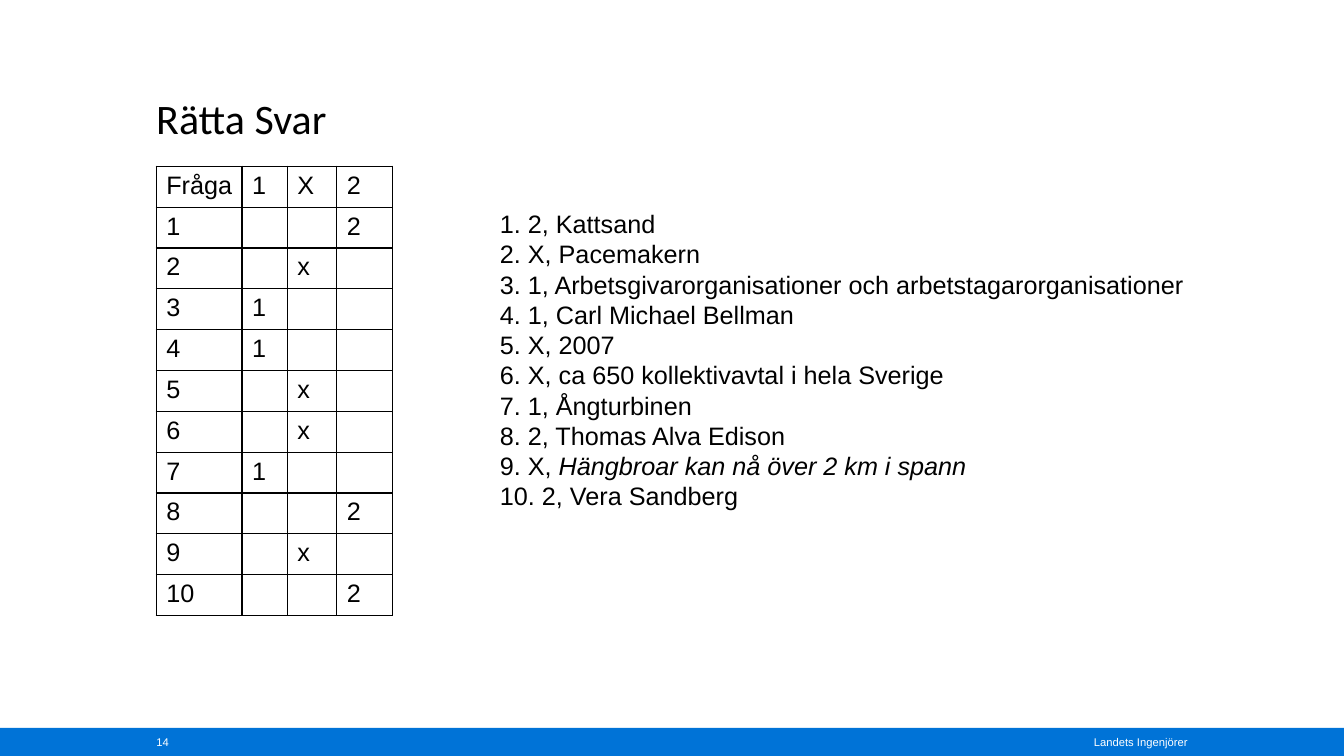
from dataclasses import dataclass

from lxml import etree
from pptx import Presentation
from pptx import util as u
from pptx.dml.color import RGBColor
from pptx.enum import shapes, text
from pptx.oxml import ns


@dataclass(frozen=True)
class Theme:
    ink: str = "000000"
    paper: str = "FFFFFF"
    bar: str = "0073D7"
    body_font: str = "Arial"
    title_font: str = "Calibri"
    title_size: int = 30
    body_size: int = 18
    footer_size: int = 8
    border: int = 1


ANSWERS = [
    ("2", "Kattsand"),
    ("X", "Pacemakern"),
    ("1", "Arbetsgivarorganisationer och arbetstagarorganisationer"),
    ("1", "Carl Michael Bellman"),
    ("X", "2007"),
    ("X", "ca 650 kollektivavtal i hela Sverige"),
    ("1", "Ångturbinen"),
    ("2", "Thomas Alva Edison"),
    ("X", "Hängbroar kan nå över 2 km i spann"),
    ("2", "Vera Sandberg"),
]
ITALIC_ANSWERS = {9}
CHOICES = ["1", "X", "2"]
COLUMN_WIDTHS = [0.85, 0.45, 0.49, 0.55]
ROW_HEIGHT = 4.46 / 11
CELL_RIGHT_MARGIN = 0.04


def add_run(p, content, *, font, size, color, italic=False):
    r = p.add_run()
    r.text = content
    r.font.name = font
    r.font.size = u.Pt(size)
    r.font.color.rgb = RGBColor.from_string(color)
    r.font.italic = italic
    return r


class Deck:
    def __init__(self, theme):
        self.theme = theme
        self.prs = Presentation()
        self.prs.slide_width = u.Inches(13.33)
        self.prs.slide_height = u.Inches(7.5)
        self.s = self.prs.slides.add_slide(self.prs.slide_layouts[6])
        self.body = dict(font=theme.body_font, size=theme.body_size, color=theme.ink)
        self.footer = dict(font=theme.body_font, size=theme.footer_size, color=theme.paper)
        self.heading = dict(font=theme.title_font, size=theme.title_size, color=theme.ink)

    def bar(self, *box):
        sp = self.s.shapes.add_shape(shapes.MSO_SHAPE.RECTANGLE, *map(u.Inches, box))
        sp.shadow.inherit = False
        sp.fill.solid()
        sp.fill.fore_color.rgb = RGBColor.from_string(self.theme.bar)
        sp.line.fill.background()

    def frame(self, *box, inset=True):
        tf = self.s.shapes.add_textbox(*map(u.Inches, box)).text_frame
        tf.word_wrap = True
        if not inset:
            tf.margin_left = tf.margin_right = tf.margin_top = tf.margin_bottom = 0
        return tf

    def label(self, content, *box, style, align=text.PP_ALIGN.LEFT,
              anchor=text.MSO_ANCHOR.TOP, spacing=1.0):
        tf = self.frame(*box, inset=False)
        tf.vertical_anchor = anchor
        p = tf.paragraphs[0]
        p.alignment = align
        p.line_spacing = spacing
        add_run(p, content, **style)

    def answers(self, *box):
        tf = self.frame(*box)
        for n, (mark, answer) in enumerate(ANSWERS, 1):
            p = tf.paragraphs[0] if n == 1 else tf.add_paragraph()
            add_run(p, f"{n}. {mark}, ", **self.body)
            add_run(p, answer, italic=n in ITALIC_ANSWERS, **self.body)

    def border(self, cell):
        tc_pr = cell._tc.get_or_add_tcPr()
        for side in ("L", "R", "T", "B"):
            ln = etree.SubElement(tc_pr, ns.qn(f"a:ln{side}"), w=str(u.Pt(self.theme.border)))
            fill = etree.SubElement(ln, ns.qn("a:solidFill"))
            etree.SubElement(fill, ns.qn("a:srgbClr"), val=self.theme.ink)

    def table(self, rows, left, top):
        size = (sum(COLUMN_WIDTHS), ROW_HEIGHT * len(rows))
        tbl = self.s.shapes.add_table(
            len(rows), len(COLUMN_WIDTHS), *map(u.Inches, (left, top, *size))).table
        tbl.first_row = tbl.horz_banding = False
        for column, width in zip(tbl.columns, COLUMN_WIDTHS):
            column.width = u.Inches(width)
        for i, row in enumerate(rows):
            tbl.rows[i].height = u.Inches(ROW_HEIGHT)
            for j, value in enumerate(row):
                cell = tbl.cell(i, j)
                self.border(cell)
                cell.fill.background()
                cell.margin_right = u.Inches(CELL_RIGHT_MARGIN)
                p = cell.text_frame.paragraphs[0]
                p.font.size = u.Pt(self.theme.body_size)
                if value:
                    add_run(p, value, **self.body)


def main():
    deck = Deck(Theme())
    deck.bar(0, 7.22, 13.33, 0.28)
    deck.label("14", 1.55, 7.3, 0.59, 0.13, style=deck.footer,
               anchor=text.MSO_ANCHOR.MIDDLE)
    deck.label("Landets Ingenjörer", 10.6, 7.3, 1.18, 0.13, style=deck.footer,
               align=text.PP_ALIGN.RIGHT)
    deck.label("Rätta Svar", 1.55, 0.87, 10.24, 0.94, style=deck.heading, spacing=1.1)
    rows = [["Fråga", *CHOICES]]
    for n, (mark, _) in enumerate(ANSWERS, 1):
        rows.append([str(n)] + [mark.lower() if c == mark else "" for c in CHOICES])
    deck.table(rows, 1.55, 1.65)
    deck.answers(4.86, 2.02, 7.38, 3.13)
    deck.prs.save("out.pptx")


if __name__ == "__main__":
    main()
